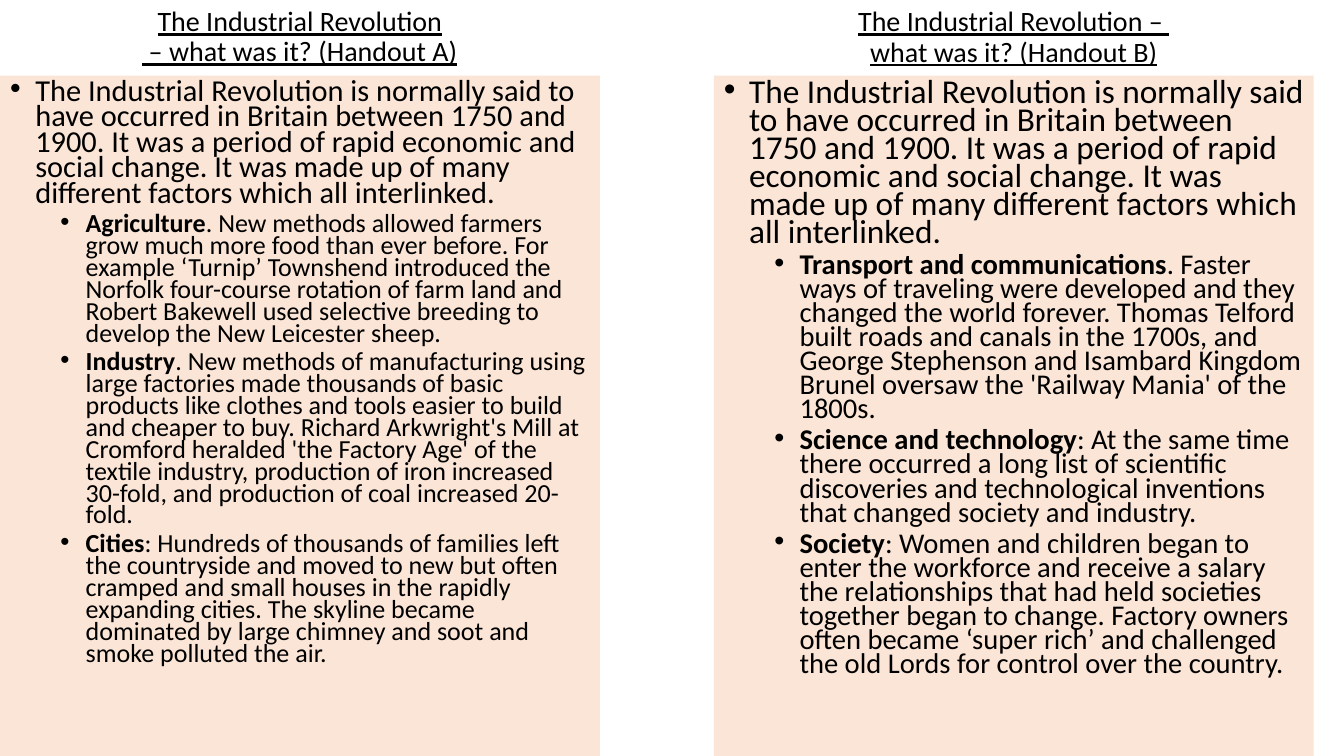
import pptx
import pptx.dml.color
import pptx.enum.text
import pptx.oxml
import pptx.oxml.ns
import pptx.util
from pptx.util import Inches

COLORS = {"text": "000000", "panel": "FBE5D6"}
FONT = "Calibri"
PANEL_WIDTH, TITLE_HEIGHT, PANEL_HEIGHT = 5.95, 0.75, 6.75
LEFT_A, LEFT_B = 0, 7.08

INTRO = (
    "The Industrial Revolution is normally said to have occurred in Britain between 1750 and 1900. "
    "It was a period of rapid economic and social change. "
    "It was made up of many different factors which all interlinked."
)
FACTORS_A = [
    ("Agriculture", ". New methods allowed farmers grow much more food than ever before. "
     "For example ‘Turnip’ Townshend introduced the Norfolk four-course rotation of farm land "
     "and Robert Bakewell used selective breeding to develop the New Leicester sheep."),
    ("Industry", ". New methods of manufacturing using large factories made thousands of basic "
     "products like clothes and tools easier to build and cheaper to buy. Richard Arkwright's "
     "Mill at Cromford heralded 'the Factory Age' of the textile industry, production of iron "
     "increased 30-fold, and production of coal increased 20-fold."),
    ("Cities", ": Hundreds of thousands of families left the countryside and moved to new but "
     "often cramped and small houses in the rapidly expanding cities. The skyline became "
     "dominated by large chimney and soot and smoke polluted the air."),
]
FACTORS_B = [
    ("Transport and communications", ". Faster ways of traveling were developed and they changed "
     "the world forever. Thomas Telford built roads and canals in the 1700s, and George "
     "Stephenson and Isambard Kingdom Brunel oversaw the 'Railway Mania' of the 1800s."),
    ("Science and technology", ": At the same time there occurred a long list of scientific "
     "discoveries and technological inventions that changed society and industry."),
    ("Society", ": Women and children began to enter the workforce and receive a salary the "
     "relationships that had held societies together began to change. Factory owners often "
     "became ‘super rich’ and challenged the old Lords for control over the country."),
]


def add_text(para, text, size, bold=False, underline=False):
    span = para.add_run()
    span.text = text
    span.font.name = FONT
    span.font.size = pptx.util.Pt(size)
    span.font.bold = bold
    span.font.underline = underline
    span.font.color.rgb = pptx.dml.color.RGBColor.from_string(COLORS["text"])


class Handout:
    def __init__(self, deck):
        self.slide = deck.slides.add_slide(deck.slide_layouts.get_by_name("Two Content"))

    def place(self, box, left, top, height):
        box.left, box.top = Inches(left), Inches(top)
        box.width, box.height = Inches(PANEL_WIDTH), Inches(height)
        box.text_frame.word_wrap = True
        box.text_frame.auto_size = pptx.enum.text.MSO_AUTO_SIZE.NONE

    def next_para(self, frame):
        first = frame.paragraphs[0]
        return frame.add_paragraph() if first.runs else first

    def heading(self, box, left, paragraphs):
        self.place(box, left, 0, TITLE_HEIGHT)
        frame = box.text_frame
        frame.vertical_anchor = pptx.enum.text.MSO_ANCHOR.MIDDLE
        for lines in paragraphs:
            para = self.next_para(frame)
            para.alignment = pptx.enum.text.PP_ALIGN.CENTER
            para.line_spacing = 0.9
            for number, line in enumerate(lines):
                if number:
                    para.add_line_break()
                add_text(para, line, 20, underline=True)

    def bullet(self, frame, level, indent, before):
        para = self.next_para(frame)
        properties = para._p.get_or_add_pPr()
        properties.set("marL", str(Inches(indent)))
        properties.set("indent", str(Inches(-0.25)))
        for tag, name, value in (("a:buFont", "typeface", "Arial"), ("a:buChar", "char", "•")):
            mark = pptx.oxml.xmlchemy.OxmlElement(tag)
            mark.set(name, value)
            properties.append(mark)
        para.level = level
        para.line_spacing = 0.7
        para.space_before = pptx.util.Pt(before)
        para.space_after = pptx.util.Pt(0)
        return para

    def panel(self, box, left, factors, intro_size, factor_size):
        self.place(box, left, TITLE_HEIGHT, PANEL_HEIGHT)
        box.fill.solid()
        box.fill.fore_color.rgb = pptx.dml.color.RGBColor.from_string(COLORS["panel"])
        frame = box.text_frame
        add_text(self.bullet(frame, 0, 0.25, 0), INTRO, intro_size)
        for name, description in factors:
            para = self.bullet(frame, 1, 0.75, 5)
            add_text(para, name, factor_size, bold=True)
            add_text(para, description, factor_size)


def main():
    deck = pptx.Presentation()
    deck.slide_width, deck.slide_height = Inches(13.33), Inches(7.5)
    handout = Handout(deck)
    shapes = handout.slide.shapes

    # Handout A
    handout.heading(shapes.title, LEFT_A,
                    [["The Industrial Revolution", " – what was it? (Handout A)"]])
    handout.panel(handout.slide.placeholders[1], LEFT_A, FACTORS_A, 21.7, 18.6)

    # Handout B
    handout.panel(handout.slide.placeholders[2], LEFT_B, FACTORS_B, 23.8, 20.4)
    title_b = shapes.add_textbox(0, 0, 0, 0)
    handout.heading(title_b, LEFT_B,
                    [["The Industrial Revolution – "], ["what was it? (Handout B)"]])

    deck.save("out.pptx")


if __name__ == "__main__":
    main()
